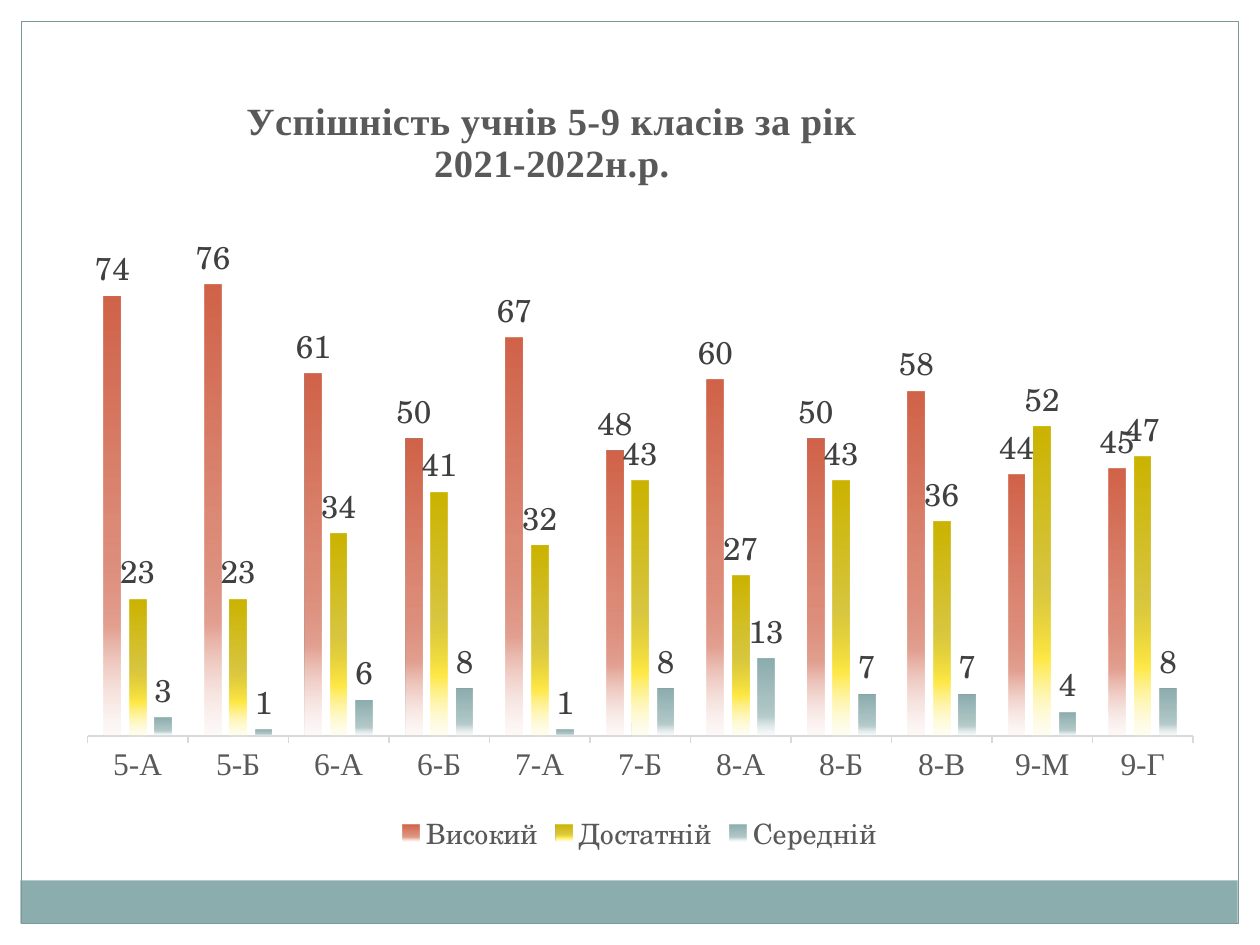
"""Build a slide with a column chart of pupils' results by class."""
from lxml.etree import SubElement
from pptx import Presentation
from pptx.chart.data import CategoryChartData as Data
from pptx.dml.color import RGBColor
from pptx.enum.chart import XL_CHART_TYPE as Kind, XL_LABEL_POSITION as Spot
from pptx.enum.chart import XL_LEGEND_POSITION as Side, XL_TICK_MARK as Tick
from pptx.enum.shapes import MSO_SHAPE as Shape
from pptx.oxml import parse_xml
from pptx.oxml.ns import nsdecls, qn
from pptx.util import Cm, Pt

TITLE = "Успішність учнів 5-9 класів за рік\n2021-2022н.р."
CLASSES = ["5-А", "5-Б", "6-А", "6-Б", "7-А", "7-Б", "8-А", "8-Б", "8-В", "9-М", "9-Г"]
LEVELS = [
    ("Високий", [74, 76, 61, 50, 67, 48, 60, 50, 58, 44, 45], ("D16349", "E3A192", "F6E0DB")),
    ("Достатній", [23, 23, 34, 41, 32, 43, 27, 43, 36, 52, 47], ("CCB400", "FFE947", "FFF8C2")),
    ("Середній", [3, 1, 6, 8, 1, 8, 13, 7, 7, 4, 8], ("8CADAE", "BACECE", "E8EFEF")),
]
SERIF, BOOK = "Times New Roman", "TeX Gyre Schola"
WIDE, HIGH, RIM = 25.4, 19.05, 0.43
WHITE = RGBColor(0xFF, 0xFF, 0xFF)
TEAL = RGBColor(0x8C, 0xAD, 0xAE)
EDGE = RGBColor(0x7C, 0x99, 0x9A)
GREY = RGBColor(0x59, 0x59, 0x59)
DARK = RGBColor(0x40, 0x40, 0x40)
PALE = RGBColor(0xD9, 0xD9, 0xD9)
PANELS = [
    (0, 0, WIDE, RIM, WHITE),
    (WIDE - RIM, 0, RIM, HIGH, WHITE),
    (0, 0, RIM, HIGH, WHITE),
    (0.41, 17.75, 24.54, 0.87, TEAL),
]


def style(font, size, color, name):
    font.size, font.name, font.bold = Pt(size), name, False
    font.color.rgb = color


def add_rect(slide, left, top, width, height):
    rect = slide.shapes.add_shape(Shape.RECTANGLE, Cm(left), Cm(top), Cm(width), Cm(height))
    rect.shadow.inherit = False
    return rect


def place(part, index, **shares):
    for old in part.findall(qn("c:layout")):
        part.remove(old)
    layout = parse_xml(f"<c:layout {nsdecls('c')}/>")
    manual = SubElement(layout, qn("c:manualLayout"))
    if "w" in shares:
        SubElement(manual, qn("c:layoutTarget")).set("val", "inner")
    for tag in ("xMode", "yMode"):
        SubElement(manual, qn(f"c:{tag}")).set("val", "edge")
    for tag, share in shares.items():
        SubElement(manual, qn(f"c:{tag}")).set("val", str(share / 100))
    part.insert(index, layout)


def shade(series, colors):
    main, mid, end = colors
    stops = [(0, main, 100), (51, main, 75), (75, mid, 100), (100, end, 15)]
    inner = "".join(
        f'<a:gs pos="{pos * 1000}"><a:srgbClr val="{color}">'
        f'<a:alpha val="{alpha * 1000}"/></a:srgbClr></a:gs>'
        for pos, color, alpha in stops
    )
    fill = parse_xml(
        f'<a:gradFill {nsdecls("a")}><a:gsLst>{inner}</a:gsLst>'
        '<a:lin ang="5400000" scaled="0"/></a:gradFill>'
    )
    series._element.get_or_add_spPr().insert(0, fill)


def add_title(chart):
    chart.has_title = True
    title = chart.chart_title
    frame = title.text_frame
    frame.text = TITLE
    for para in frame.paragraphs:
        for run in para.runs:
            style(run.font, 22, GREY, SERIF)
            run.font.bold = True
            run._r.get_or_add_rPr().set("spc", "40")
    place(title._element, 1, x=15.5, y=3.7)


def add_bars(slide):
    data = Data(number_format="0")
    data.categories = CLASSES
    for name, values, _ in LEVELS:
        data.add_series(name, values)
    chart = slide.shapes.add_chart(
        Kind.COLUMN_CLUSTERED, Cm(1.3), Cm(1.32), Cm(23.19), Cm(16), data
    ).chart
    style(chart.font, 10, RGBColor(0, 0, 0), BOOK)
    add_title(chart)

    plot = chart.plots[0]
    plot.gap_width, plot.overlap, plot.vary_by_categories = 200, -54, False
    for series, (_, _, colors) in zip(plot.series, LEVELS):
        series.invert_if_negative = False
        shade(series, colors)
        labels = series.data_labels
        labels.show_value, labels.position = True, Spot.OUTSIDE_END
        labels.number_format, labels.number_format_is_linked = "0", False
        style(labels.font, 18, DARK, BOOK)

    axis = chart.category_axis
    axis.major_tick_mark = Tick.OUTSIDE
    axis.format.line.color.rgb, axis.format.line.width = PALE, Pt(0.75)
    style(axis.tick_labels.font, 18, GREY, SERIF)
    scale = chart.value_axis
    scale.visible = scale.has_major_gridlines = False
    scale.minimum_scale, scale.maximum_scale = 0, 80

    chart.has_legend = True
    chart.legend.position, chart.legend.include_in_layout = Side.BOTTOM, False
    style(chart.legend.font, 16, GREY, BOOK)
    place(chart._chartSpace.chart.plotArea, 0, x=2, y=24.6, w=96.1, h=59.9)


def main():
    deck = Presentation()
    deck.slide_width, deck.slide_height = Cm(WIDE), Cm(HIGH)
    slide = deck.slides.add_slide(deck.slide_layouts[6])
    for *box, color in PANELS:
        panel = add_rect(slide, *box)
        panel.fill.solid()
        panel.fill.fore_color.rgb = color
        panel.line.fill.background()
    frame = add_rect(slide, RIM, RIM, WIDE - 2 * RIM, HIGH - 2 * RIM)
    frame.fill.background()
    frame.line.color.rgb, frame.line.width = EDGE, Pt(0.75)
    add_bars(slide)
    deck.save("out.pptx")


if __name__ == "__main__":
    main()
